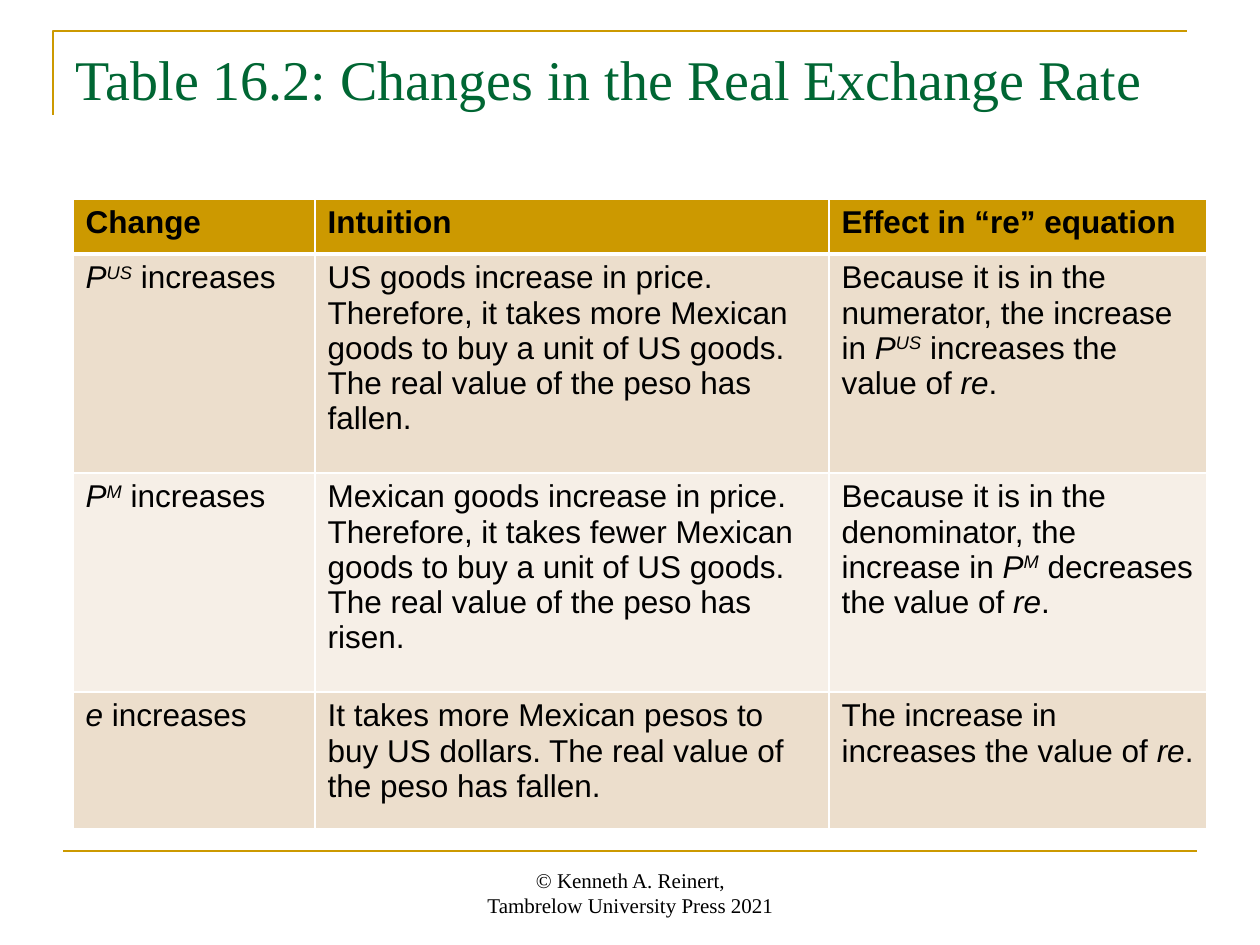
from lxml.etree import SubElement
from pptx import Presentation
from pptx.dml.color import RGBColor
from pptx.enum.shapes import MSO_CONNECTOR
from pptx.enum.text import MSO_ANCHOR, PP_ALIGN
from pptx.oxml.ns import qn
from pptx.util import Emu, Pt

COLORS = {"gold": "CC9900", "green": "006633", "black": "000000",
          "white": "FFFFFF", "band": "ECDECC", "pale": "F6EFE7"}
SERIF, SANS = "Times New Roman", "Arial"

P, RE = ("P", "i"), ("re", "i")
HEADER = ["Change", "Intuition", "Effect in “re” equation"]
# A cell is a list of runs: plain text, or (text, "i" italic / "sup" italic superscript).
ROWS = [
    [[P, ("US", "sup"), " increases"],
     ["US goods increase in price. Therefore, it takes more Mexican goods to buy "
      "a unit of US goods. The real value of the peso has fallen."],
     ["Because it is in the numerator, the increase in ", P, ("US", "sup"),
      " increases the value of ", RE, "."]],
    [[P, ("M", "sup"), " increases"],
     ["Mexican goods increase in price. Therefore, it takes fewer Mexican goods to buy "
      "a unit of US goods. The real value of the peso has risen."],
     ["Because it is in the denominator, the increase in ", P, ("M", "sup"),
      " decreases the value of ", RE, "."]],
    [[("e", "i"), " increases"],
     ["It takes more Mexican pesos to buy US dollars. "
      "The real value of the peso has fallen."],
     ["The increase in increases the value of ", RE, "."]],
]
COL_WIDTHS = [242, 514, 378]
ROW_HEIGHTS = [55, 219, 219, 137]


def px(n):
    return Emu(round(n * 914400 / 126))


def rgb(name):
    return RGBColor.from_string(COLORS[name])


def style_font(font, name, size, color):
    font.name, font.size = name, Pt(size)
    font.color.rgb = rgb(color)


def style_line(line):
    line.color.rgb = rgb("gold")
    line.width = Pt(1.5)


def add_corner(s, x, y, w, h):
    """Open angle along the left and top of the title."""
    builder = s.shapes.build_freeform(px(x), px(y + h))
    builder.add_line_segments([(px(x), px(y)), (px(x + w), px(y))], close=False)
    sp = builder.convert_to_shape()
    sp.fill.background()
    sp.shadow.inherit = False
    style_line(sp.line)


def add_rule(s, x, y, w):
    c = s.shapes.add_connector(MSO_CONNECTOR.STRAIGHT, px(x), px(y), px(x + w), px(y))
    style_line(c.line)
    SubElement(c._element.spPr, qn("a:effectLst"))


def add_text(s, box, lines, size, color, align=PP_ALIGN.LEFT, anchor=MSO_ANCHOR.TOP):
    tf = s.shapes.add_textbox(*map(px, box)).text_frame
    tf.word_wrap = True
    tf.vertical_anchor = anchor
    tf.text = "\n".join(lines)
    for p in tf.paragraphs:
        p.alignment = align
        style_font(p.font, SERIF, size, color)


def add_border(cell, side, width):
    ln = SubElement(cell._tc.get_or_add_tcPr(), qn("a:" + side), w=str(Pt(width)))
    fill = SubElement(ln, qn("a:solidFill"))
    SubElement(fill, qn("a:srgbClr"), val=COLORS["white"])


def fill_cell(cell, runs, fill, header=False):
    for side in ("lnL", "lnR", "lnT", "lnB"):
        add_border(cell, side, 3 if header and side == "lnB" else 1)
    cell.fill.solid()
    cell.fill.fore_color.rgb = rgb(fill)
    p = cell.text_frame.paragraphs[0]
    style_font(p.font, SANS, 18, "black")
    p.font.bold = header
    for run in runs:
        text, style = (run, "") if isinstance(run, str) else run
        r = p.add_run()
        r.text = text
        style_font(r.font, SANS, 18, "black")
        r.font.bold = header
        r.font.italic = bool(style)
        if style == "sup":
            r.font._element.set("baseline", "30000")


def add_rate_table(s, x, y):
    size = sum(COL_WIDTHS), sum(ROW_HEIGHTS)
    table = s.shapes.add_table(len(ROW_HEIGHTS), len(COL_WIDTHS),
                               *map(px, (x, y, *size))).table
    for col, w in zip(table.columns, COL_WIDTHS):
        col.width = px(w)
    for row, h in zip(table.rows, ROW_HEIGHTS):
        row.height = px(h)
    for c, text in enumerate(HEADER):
        fill_cell(table.cell(0, c), [text], "gold", header=True)
    for i, row in enumerate(ROWS):
        for c, runs in enumerate(row):
            fill_cell(table.cell(i + 1, c), runs, "pale" if i % 2 else "band")


def main():
    prs = Presentation()
    prs.slide_width, prs.slide_height = px(1260), px(945)
    s = prs.slides.add_slide(prs.slide_layouts[6])
    add_corner(s, 53, 31, 1134, 84)
    add_rule(s, 63, 851, 1134)
    add_text(s, (63, 38, 1134, 108), ["Table 16.2: Changes in the Real Exchange Rate"],
             32, "green")
    add_rate_table(s, 73, 199)
    add_text(s, (431, 861, 399, 63),
             ["© Kenneth A. Reinert,", "Tambrelow University Press 2021"],
             12, "black", PP_ALIGN.CENTER, MSO_ANCHOR.BOTTOM)
    prs.save("out.pptx")


if __name__ == "__main__":
    main()
